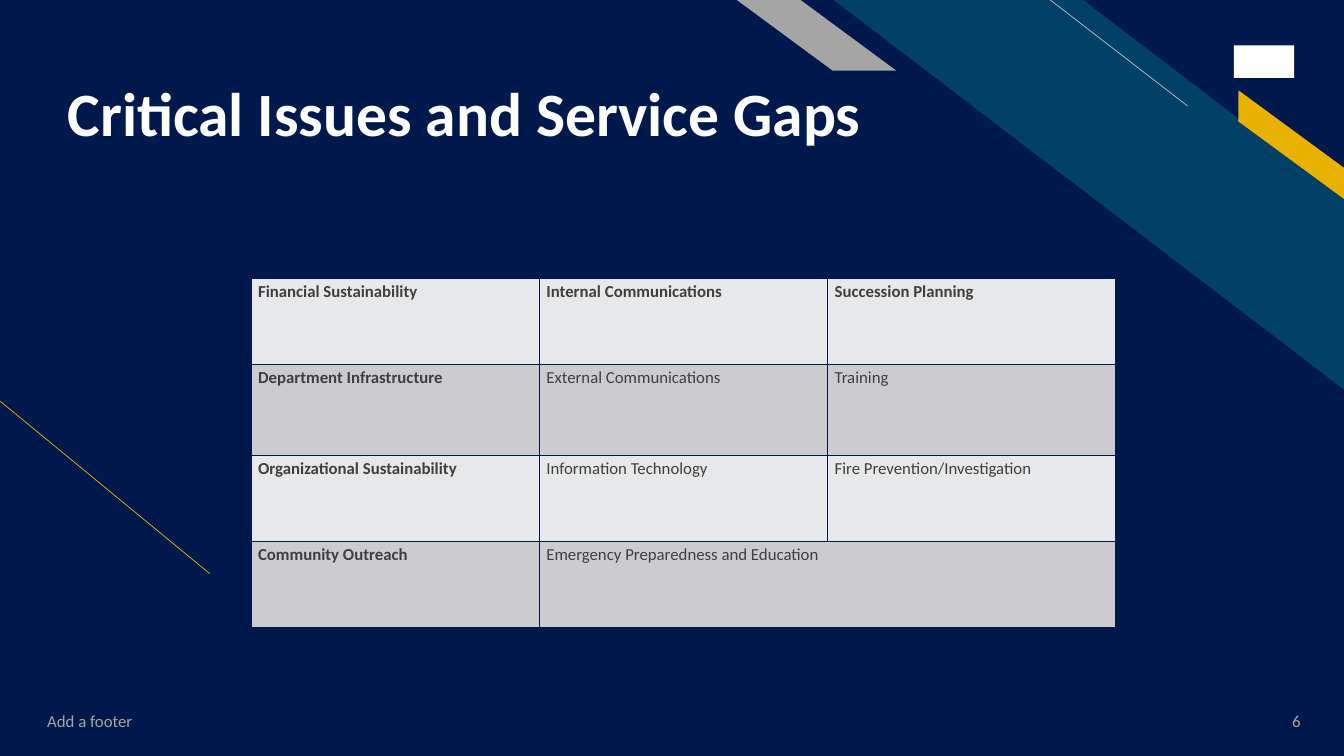
import pptx
import pptx.util
import pptx.dml.color
import pptx.enum.shapes
import pptx.enum.text
import pptx.oxml.ns
from lxml import etree

WIDE, HIGH = pptx.util.Inches(13.333), pptx.util.Inches(7.5)
NAVY, TEAL, GOLD, GREY, WHITE = "00194C", "014067", "EAB200", "A5A5A5", "FFFFFF"
BANDS = ("E7E8E9", "CCCCD0")
KIND = pptx.enum.shapes.MSO_SHAPE
SIDE = pptx.enum.text.PP_ALIGN
EDGE = pptx.enum.text.MSO_ANCHOR

ISSUES = [
    ["Financial Sustainability", "Internal Communications", "Succession Planning"],
    ["Department Infrastructure", "External Communications", "Training"],
    ["Organizational Sustainability", "Information Technology",
     "Fire Prevention/Investigation"],
    ["Community Outreach", "Emergency Preparedness and Education"],
]
ROWS = (11.4, 12.07, 11.4, 11.4)


def across(share):
    """Percent of the slide width."""
    return round(WIDE * share / 100)


def down(share):
    """Percent of the slide height."""
    return round(HIGH * share / 100)


def area(left, top, width, height):
    return across(left), down(top), across(width), down(height)


def paint(target, code):
    """Colour a fill or a font from a hex string."""
    if hasattr(target, "solid"):
        target.solid()
        target.fore_color.rgb = pptx.dml.color.RGBColor.from_string(code)
    else:
        target.color.rgb = pptx.dml.color.RGBColor.from_string(code)


def write(frame, text, size=12, color=GREY, font="Calibri", bold=False,
          align=SIDE.LEFT, lead=None, anchor=EDGE.TOP):
    frame.word_wrap = True
    frame.vertical_anchor = anchor
    para = frame.paragraphs[0]
    para.alignment = align
    para.line_spacing = lead
    run = para.add_run()
    run.text = text
    run.font.name, run.font.size = font, pptx.util.Pt(size)
    run.font.bold = bold
    paint(run.font, color)


def label(slide, place, text, **look):
    box = slide.shapes.add_textbox(*area(*place))
    write(box.text_frame, text, **look)


def block(slide, kind, place, color):
    """A plain filled shape without outline or shadow."""
    shape = slide.shapes.add_shape(kind, *area(*place))
    shape.shadow.inherit = False
    paint(shape.fill, color)
    shape.line.fill.background()
    return shape


def stripe(slide, kind, place, color, slant, turn=0):
    """A slanted band, mirrored left to right."""
    band = block(slide, kind, place, color)
    band.adjustments[0] = slant
    band.rotation = turn
    band.element.spPr.xfrm.set("flipH", "1")


def line(slide, start, end, color):
    rule = slide.shapes.add_connector(
        pptx.enum.shapes.MSO_CONNECTOR.STRAIGHT,
        across(start[0]), down(start[1]), across(end[0]), down(end[1]))
    paint(rule.line.fill, color)
    rule.line.width = pptx.util.Pt(0.5)
    etree.SubElement(rule.element.spPr, pptx.oxml.ns.qn("a:effectLst"))


def border(cell, color):
    props = cell._tc.get_or_add_tcPr()
    for spot, side in enumerate(("lnL", "lnR", "lnT", "lnB")):
        edge = etree.Element(pptx.oxml.ns.qn("a:" + side), w="12700")
        fill = etree.SubElement(edge, pptx.oxml.ns.qn("a:solidFill"))
        etree.SubElement(fill, pptx.oxml.ns.qn("a:srgbClr"), val=color)
        props.insert(spot, edge)


def grid(slide, left, top, width):
    table = slide.shapes.add_table(
        len(ISSUES), 3, *area(left, top, width, sum(ROWS))).table
    for row, share in zip(table.rows, ROWS):
        row.height = down(share)
    for col in table.columns:
        col.width = across(width / 3)
    for r, row in enumerate(table.rows):
        for cell in row.cells:
            paint(cell.fill, BANDS[r % 2])
            border(cell, NAVY)
            cell.margin_left = cell.margin_right = pptx.util.Inches(0.07)
            cell.margin_top = cell.margin_bottom = 0
    table.cell(3, 1).merge(table.cell(3, 2))
    for r, texts in enumerate(ISSUES):
        for c, text in enumerate(texts):
            # The top row and the first column are bold
            write(table.cell(r, c).text_frame, text, color="3F3F3F",
                  bold=r == 0 or c == 0, lead=1.15,
                  align=SIDE.LEFT if len(texts) == 2 else SIDE.JUSTIFY)


def head(slide, place, text):
    title = slide.shapes.title
    title.left, title.top, title.width, title.height = area(*place)
    title.text_frame.margin_bottom = 0
    write(title.text_frame, text, size=44, color=WHITE, bold=True,
          lead=0.9, anchor=EDGE.BOTTOM)


def main():
    deck = pptx.Presentation()
    deck.slide_width, deck.slide_height = WIDE, HIGH
    slide = deck.slides.add_slide(deck.slide_layouts[5])
    paint(slide.background.fill, NAVY)

    # Slanted decoration
    line(slide, (15.6, 75.87), (0, 53.05), GOLD)
    stripe(slide, KIND.DIAGONAL_STRIPE, (62.03, 0, 38.03, 51.6), TEAL, 0.512)
    line(slide, (88.35, 14), (78.15, 0), "BFBFBF")
    stripe(slide, KIND.PARALLELOGRAM, (90.53, 17.47, 11.1, 3.33), GOLD, 0.72, 36.3)
    stripe(slide, KIND.PARALLELOGRAM, (54.83, 0, 11.85, 9.33), GREY, 1.356)

    # Corner mark
    block(slide, KIND.RECTANGLE, (91.8, 6, 4.5, 4.3), WHITE)

    # Title and table
    head(slide, (4.28, 3.07, 68.33, 16.8), "Critical Issues and Service Gaps")
    grid(slide, 18.68, 36.8, 64.35)

    # Footer
    label(slide, (2.78, 92.67, 33.75, 5.33), "Add a footer", anchor=EDGE.MIDDLE)
    label(slide, (91.43, 92.67, 6.08, 5.33), "6", anchor=EDGE.MIDDLE,
          align=SIDE.RIGHT)

    deck.save("out.pptx")


if __name__ == "__main__":
    main()
